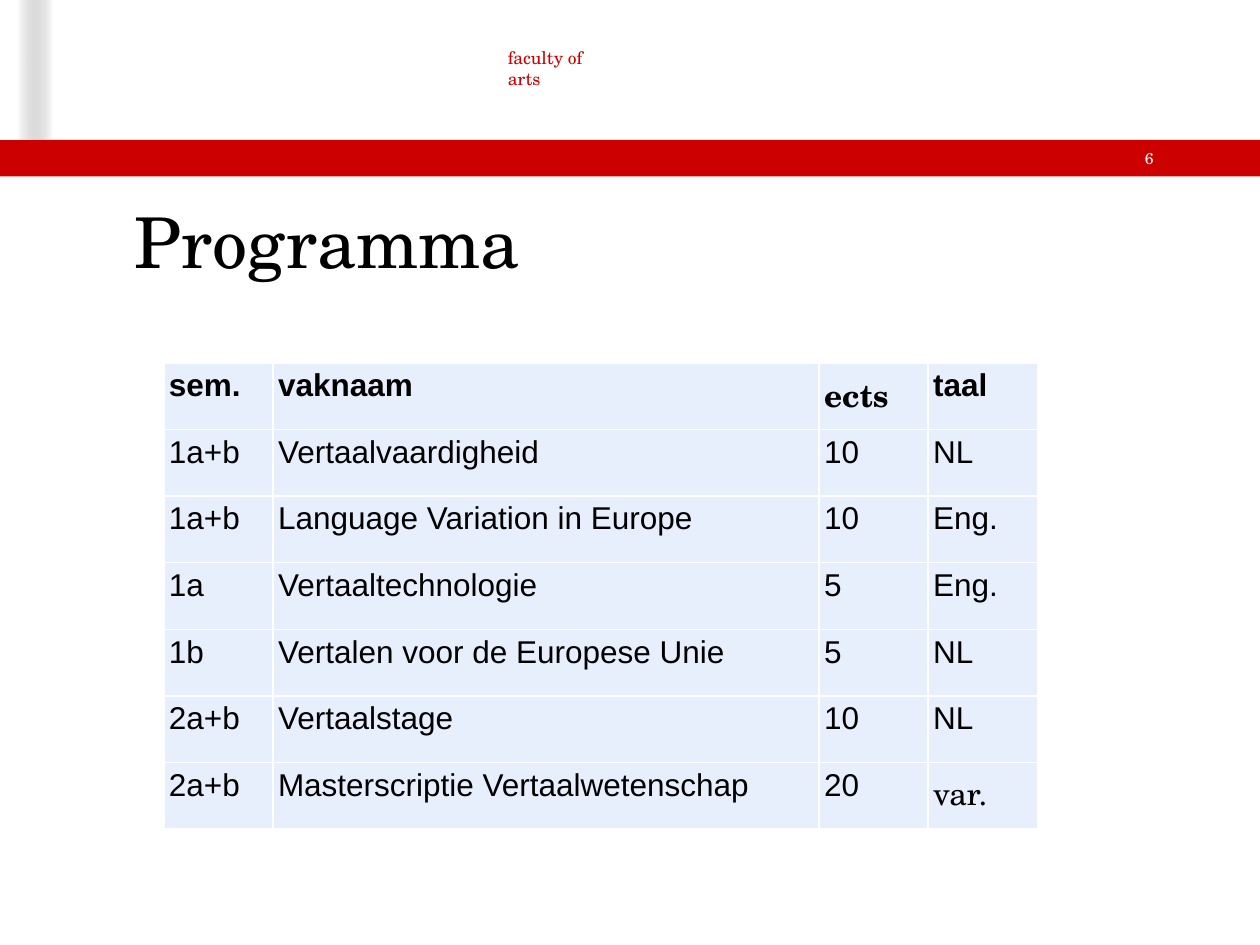
from lxml import etree
from pptx import Presentation
from pptx.dml.color import RGBColor
from pptx.enum.shapes import MSO_SHAPE
from pptx.enum.text import MSO_ANCHOR
from pptx.oxml.ns import qn
from pptx.util import Pt

RECT = MSO_SHAPE.RECTANGLE
TOP = MSO_ANCHOR.TOP
MIDDLE = MSO_ANCHOR.MIDDLE
SERIF = "TeX Gyre Schola"
SANS = "Arial"
RED = "CC0000"
WHITE = "FFFFFF"
BLACK = "000000"
PALE = "E7EFFC"
GREY = "757575"

ROWS = [
    ("sem.", "vaknaam", "ects", "taal"),
    ("1a+b", "Vertaalvaardigheid", "10", "NL"),
    ("1a+b", "Language Variation in Europe", "10", "Eng."),
    ("1a", "Vertaaltechnologie", "5", "Eng."),
    ("1b", "Vertalen voor de Europese Unie", "5", "NL"),
    ("2a+b", "Vertaalstage", "10", "NL"),
    ("2a+b", "Masterscriptie Vertaalwetenschap", "20", "var."),
]
SHARES = (1, 5, 1, 1)
SERIF_WORDS = ("ects", "var.")


def color(code):
    return RGBColor.from_string(code)


def style(par, face, size, code, bold=False):
    for run in par.runs:
        font = run.font
        font.name = face
        font.size = Pt(size)
        font.bold = bold
        font.color.rgb = color(code)


def add_text(slide, box, text, size, code, pads=(0, 0, 0, 0), anchor=TOP):
    frame = slide.shapes.add_textbox(*map(Pt, box)).text_frame
    frame.word_wrap = True
    frame.vertical_anchor = anchor
    frame.margin_left, frame.margin_top, frame.margin_right, frame.margin_bottom = map(Pt, pads)
    frame.text = text
    style(frame.paragraphs[0], SERIF, size, code)


def add_rect(slide, box, code):
    shape = slide.shapes.add_shape(RECT, *map(Pt, box))
    shape.shadow.inherit = False
    shape.line.fill.background()
    shape.fill.solid()
    shape.fill.fore_color.rgb = color(code)
    return shape


def add_fade(slide, box):
    shape = add_rect(slide, box, WHITE)
    fill = shape.fill
    fill.gradient()
    fill.gradient_angle = 0
    for stop, code in zip(fill.gradient_stops, (WHITE, GREY)):
        stop.color.rgb = color(code)
    last = list(shape._element.spPr.iter(qn("a:srgbClr")))[-1]
    etree.SubElement(last, qn("a:alpha"), val="0")


def add_head(slide, left, top, width, height):
    band = 20.9
    base = top + height - band
    edge = 10
    add_rect(slide, (left, base, width, band), RED)
    add_fade(slide, (left + edge, top, 20, base - top))
    add_rect(slide, (left, top, edge, base - top), WHITE)
    add_text(slide, (left + 290.2, top + 26.8, 60.5, 24), "faculty of arts", 10, RED)
    add_text(slide, (left + 654.3, base + 5, 16, 11), "6", 9, WHITE)


def add_title(slide, left, top, width, height):
    pads = (77, 3.6, 21.6, 3.6)
    add_text(slide, (left, top, width, height), "Programma", 40, BLACK, pads, MIDDLE)


def add_edges(cell):
    props = cell._tc.get_or_add_tcPr()
    for spot, side in enumerate(("lnL", "lnR", "lnT", "lnB")):
        line = etree.Element(qn("a:" + side), w=str(Pt(1)))
        fill = etree.SubElement(line, qn("a:solidFill"))
        etree.SubElement(fill, qn("a:srgbClr"), val=WHITE)
        props.insert(spot, line)


def fill_cell(cell, text, bold):
    cell.margin_left = cell.margin_right = Pt(2.9)
    cell.margin_top = cell.margin_bottom = 0
    cell.fill.solid()
    cell.fill.fore_color.rgb = color(PALE)
    add_edges(cell)
    cell.text_frame.text = text
    par = cell.text_frame.paragraphs[0]
    par.line_spacing = 1.15
    face = SERIF if text in SERIF_WORDS else SANS
    style(par, face, 18, BLACK, bold)


def add_courses(slide, left, top, width, height):
    box = map(Pt, (left, top, width, height))
    table = slide.shapes.add_table(len(ROWS), len(SHARES), *box).table
    for col, share in zip(table.columns, SHARES):
        col.width = Pt(width * share / sum(SHARES))
    for row, (line, texts) in enumerate(zip(table.rows, ROWS)):
        line.height = Pt(height / len(ROWS))
        for cell, text in zip(line.cells, texts):
            fill_cell(cell, text, row == 0)


def main():
    deck = Presentation()
    deck.slide_width = Pt(720)
    deck.slide_height = Pt(540)
    slide = deck.slides.add_slide(deck.slide_layouts[6])
    add_head(slide, 0, 0, 720, 100.9)
    add_title(slide, 0, 106, 720, 62.5)
    add_courses(slide, 93.6, 207.4, 499.2, 266.4)
    deck.save("out.pptx")


if __name__ == "__main__":
    main()
